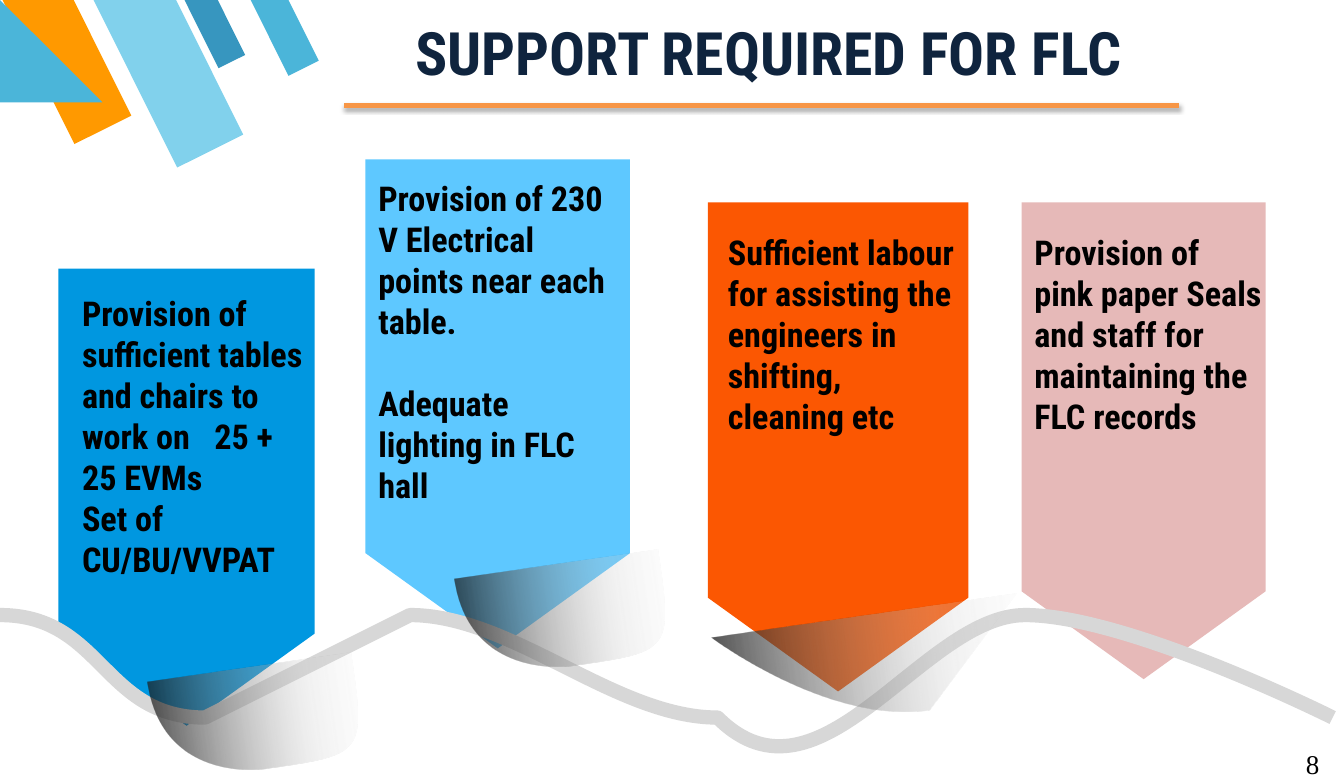
from lxml import etree
from pptx import Presentation
from pptx import util as u
from pptx.dml.color import RGBColor
from pptx.enum import shapes, text
from pptx.oxml import parse_xml
from pptx.oxml.ns import nsdecls, qn

rgb = RGBColor.from_string
CELL = u.Inches(1)
COLUMNS, ROWS = 13.11, 7.56
CONDENSED = "Roboto Condensed"

deck = Presentation()
deck.slide_width, deck.slide_height = int(COLUMNS * CELL), int(ROWS * CELL)
slide = deck.slides.add_slide(deck.slide_layouts[6])


def grid(*cells):
    return [int(cell * CELL) for cell in cells]


def add_outline(points, closed, curved):
    builder = slide.shapes.build_freeform(*points[0], scale=CELL)
    builder.add_line_segments(points[1:], close=closed)
    outline = builder.convert_to_shape()
    outline.shadow.inherit = False
    if curved:
        segments = list(outline._element.iter(qn("a:lnTo")))
        for first in range(0, len(points) - 1, 3):
            bezier = etree.Element(qn("a:cubicBezTo"))
            segments[first].addprevious(bezier)
            for segment in segments[first:first + 3]:
                bezier.append(segment[0])
                segment.getparent().remove(segment)
    return outline


ribbons = [
    (1.95, -0.11, 0.29, 0.75, "3796BF"),
    (0.34, -0.24, 0.62, 1.59, "FF9900"),
    (1.28, -0.27, 0.72, 1.84, "81D1EC"),
    (2.61, -0.13, 0.33, 0.84, "4BB5D9"),
]
for *place, color in ribbons:
    ribbon = slide.shapes.add_shape(shapes.MSO_SHAPE.FLOWCHART_MANUAL_INPUT, *grid(*place))
    ribbon.rotation = 333.5
    ribbon._element.spPr.xfrm.set("flipH", "1")
    ribbon.shadow.inherit = False
    ribbon.fill.solid()
    ribbon.fill.fore_color.rgb = rgb(color)
    ribbon.line.fill.background()

edge_ribbon = add_outline([(0.27, 1.35), (0.55, 1.21), (0, 0.09), (0, 0.79)], True, False)
edge_ribbon.fill.solid()
edge_ribbon.fill.fore_color.rgb = rgb("4BB5D9")
edge_ribbon.line.fill.background()

banners = [
    (-0.41, 3.6, 4.46, 2.5, "0097E0"),
    (2.47, 2.65, 4.77, 2.58, "5EC8FF"),
    (5.79, 3.09, 4.77, 2.54, "FB5702"),
    (8.83, 3.11, 4.65, 2.38, "E6B9B8"),
]
for *place, color in banners:
    banner = slide.shapes.add_shape(shapes.MSO_SHAPE.PENTAGON, *grid(*place))
    banner.rotation = 90
    banner.adjustments[0] = 0.36
    banner.shadow.inherit = False
    banner.fill.solid()
    banner.fill.fore_color.rgb = rgb(color)
    banner.line.fill.background()

road = add_outline([
    (0.26, 5.89), (0.69, 6.49), (1.11, 7.09), (1.79, 7.14),
    (2.47, 7.18), (3.5, 6.12), (4.35, 6.17),
    (5.19, 6.23), (6, 7.42), (6.89, 7.46),
    (7.77, 7.51), (8.62, 6.48), (9.68, 6.46),
    (10.73, 6.43), (13.19, 7.32), (13.19, 7.32),
], False, True)
road.fill.background()
road.line.color.rgb = rgb("D7D7D7")
road.line.width = u.Pt(10)

shade_points = [
    (0, 1.39), (0, 1), (0.14, 0), (0.34, 0),
    (0.54, 0), (0.74, 0.9), (0.74, 1.4),
    (0.74, 1.88), (0.57, 2.29), (0.37, 2.29),
    (0.16, 2.29), (0, 1.78), (0, 1.39),
]
shade_stops = "".join(
    f'<a:gs pos="{share * 1000}"><a:srgbClr val="{color}">'
    f'<a:alpha val="{opacity * 1000}"/></a:srgbClr></a:gs>'
    for share, color, opacity in [(0, "0D0D0D", 76), (71, "C8C8C8", 28), (100, "E4E4E4", 5)]
)
for left, top in [(2.31, 5.8), (5.31, 5.06), (8.4, 5.39), (11.6, 5.29)]:
    shade = add_outline([(left + x, top + y) for x, y in shade_points], True, True)
    shade.rotation = 261.8
    shade.line.fill.background()
    shade.fill.background()
    properties = shade._element.spPr
    properties.replace(properties.find(qn("a:noFill")), parse_xml(
        f'<a:gradFill rotWithShape="1" {nsdecls("a")}><a:gsLst>{shade_stops}</a:gsLst>'
        '<a:lin ang="5400000" scaled="0"/></a:gradFill>'))

LEFT, CENTER, RIGHT = text.PP_ALIGN.LEFT, text.PP_ALIGN.CENTER, text.PP_ALIGN.RIGHT
writings = [
    (0.67, 2.78, 2.48, 3.94, 24, CONDENSED, "000000", LEFT, 0,
     ["Provision of sufficient tables and chairs to work on\t25 + 25 EVMs",
      "Set of CU/BU/VVPAT"]),
    (3.56, 1.66, 2.48, 4.31, 24, CONDENSED, "000000", LEFT, 28.8,
     ["Provision of 230 V Electrical points near each table.",
      "Adequate lighting in FLC hall"]),
    (6.97, 2.19, 2.48, 2.56, 24, CONDENSED, "000000", LEFT, 0,
     ["Sufficient labour for assisting the engineers in shifting, cleaning etc"]),
    (9.96, 2.19, 2.48, 2.99, 24, CONDENSED, "000000", LEFT, 0,
     ["Provision of pink paper Seals and staff for maintaining the FLC records"]),
    (2.65, -0.03, 9.69, 1.06, 42, CONDENSED, "0F243E", CENTER, 0,
     ["SUPPORT REQUIRED FOR FLC"]),
    (10.27, 7.22, 2.73, 0.5, 19, "Times New Roman", "000000", RIGHT, 0, ["8"]),
]
for *place, size, font, color, align, gap, lines in writings:
    writing = slide.shapes.add_textbox(*grid(*place))
    frame = writing.text_frame
    frame.word_wrap = True
    frame.margin_left, frame.margin_right = grid(0.13, 0.13)
    frame.margin_top, frame.margin_bottom = grid(0.07, 0.07)
    if align == LEFT:
        frame.auto_size = text.MSO_AUTO_SIZE.SHAPE_TO_FIT_TEXT
    if align == CENTER:
        frame.vertical_anchor = text.MSO_ANCHOR.MIDDLE
    frame.text = "\n".join(lines)
    for order, paragraph in enumerate(frame.paragraphs):
        if "\t" in paragraph.text:
            stops = etree.SubElement(paragraph._p.get_or_add_pPr(), qn("a:tabLst"))
            etree.SubElement(stops, qn("a:tab"), pos=str(int(1.29 * CELL)), algn="l")
        paragraph.alignment = align
        if order and gap:
            paragraph.space_before = u.Pt(gap)
        for run in paragraph.runs:
            run.font.size = u.Pt(size)
            run.font.name = font
            run.font.bold = font == CONDENSED
            run.font.color.rgb = rgb(color)

title_rule = slide.shapes.add_connector(
    shapes.MSO_CONNECTOR.STRAIGHT, *grid(3.36, 1.03, 11.5, 1.03))
title_rule.line.color.rgb = rgb("F79646")
title_rule.line.width = u.Pt(3)
title_rule._element.spPr.append(parse_xml(
    f'<a:effectLst {nsdecls("a")}><a:outerShdw blurRad="{u.Pt(3.1)}" dist="{u.Pt(1.8)}" '
    'dir="5400000" rotWithShape="0"><a:srgbClr val="000000"><a:alpha val="35000"/>'
    '</a:srgbClr></a:outerShdw></a:effectLst>'))

deck.save("out.pptx")
